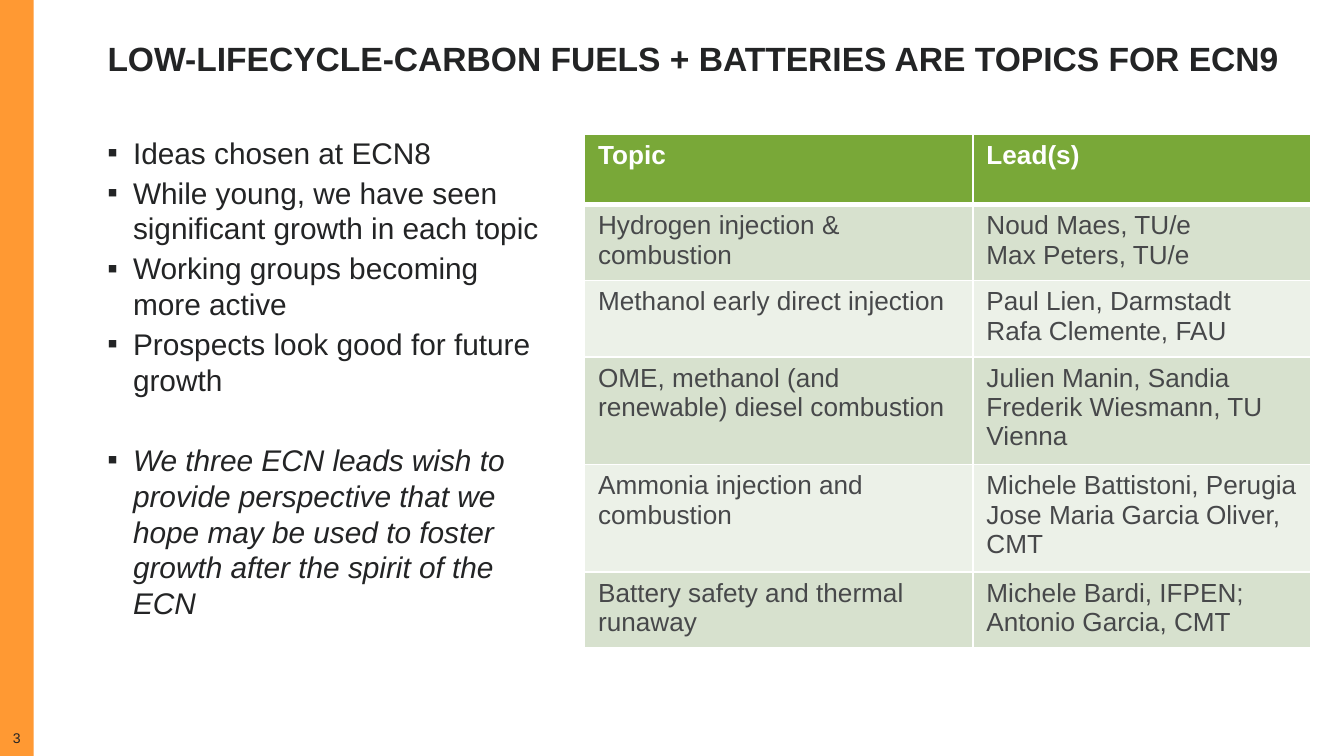
import dataclasses

import lxml.etree
import pptx
import pptx.dml.color
import pptx.enum.shapes
import pptx.enum.text
import pptx.oxml
import pptx.oxml.ns
import pptx.util

ANCHOR = pptx.enum.text.MSO_ANCHOR
ALIGN = pptx.enum.text.PP_ALIGN


@dataclasses.dataclass(frozen=True)
class Theme:
    font: str = "Arial"
    ink: str = "232425"
    table_ink: str = "47484A"
    white: str = "FFFFFF"
    accent: str = "FF9933"
    header: str = "79A838"
    bands: tuple = ("D7E1CE", "ECF1E8")
    title_size: float = 18
    body_size: float = 16
    table_size: float = 14
    number_size: float = 7.5
    thin_line: float = 1
    thick_line: float = 3


THEME = Theme()

# The slide is a grid of 40 columns by 45 rows
WIDTH, HEIGHT = pptx.util.Inches(10), pptx.util.Inches(5.625)
COLUMN, ROW = WIDTH / 40, HEIGHT / 45
TEXT_LEFT, CONTENT_TOP = 3.2, 8

TITLE = "LOW-LIFECYCLE-CARBON FUELS + BATTERIES ARE TOPICS FOR ECN9"
POINTS = [
    "Ideas chosen at ECN8",
    "While young, we have seen significant growth in each topic",
    "Working groups becoming more active",
    "Prospects look good for future growth",
]
CLOSING_POINT = (
    "We three ECN leads wish to provide perspective that we hope "
    "may be used to foster growth after the spirit of the ECN"
)
TOPICS = [
    ("Topic", "Lead(s)"),
    ("Hydrogen injection & combustion", "Noud Maes, TU/e\nMax Peters, TU/e"),
    ("Methanol early direct injection", "Paul Lien, Darmstadt\nRafa Clemente, FAU"),
    ("OME, methanol (and renewable) diesel combustion",
     "Julien Manin, Sandia\nFrederik Wiesmann, TU Vienna"),
    ("Ammonia injection and combustion",
     "Michele Battistoni, Perugia\nJose Maria Garcia Oliver, CMT"),
    ("Battery safety and thermal runaway",
     "Michele Bardi, IFPEN; Antonio Garcia, CMT"),
]
TOPIC_COLUMNS = (11.56, 10.04)
TOPIC_ROWS = (4.16, 4.16, 3.68, 5.12, 4.16, 4.16)


def place(left, top, width, height):
    """Turn grid columns and rows into slide lengths."""
    return (round(left * COLUMN), round(top * ROW),
            round(width * COLUMN), round(height * ROW))


def rgb(value):
    return pptx.dml.color.RGBColor.from_string(value)


def format_runs(text_frame, size, color=THEME.ink, bold=False):
    for paragraph in text_frame.paragraphs:
        for run in paragraph.runs:
            run.font.name = THEME.font
            run.font.size = pptx.util.Pt(size)
            run.font.color.rgb = rgb(color)
            run.font.bold = bold


def add_text(slide, area, text, size, anchor=ANCHOR.TOP, bold=False):
    text_frame = slide.shapes.add_textbox(*place(*area)).text_frame
    text_frame.word_wrap = True
    text_frame.vertical_anchor = anchor
    text_frame.margin_left = text_frame.margin_right = 0
    text_frame.margin_top = text_frame.margin_bottom = 0
    text_frame.text = text
    format_runs(text_frame, size, bold=bold)
    return text_frame


def add_band(slide, area):
    band = slide.shapes.add_shape(
        pptx.enum.shapes.MSO_SHAPE.RECTANGLE, *place(*area))
    band.shadow.inherit = False
    band.fill.solid()
    band.fill.fore_color.rgb = rgb(THEME.accent)
    band.line.fill.background()


def add_bullet(paragraph, indent=pptx.util.Inches(0.19)):
    properties = paragraph._p.get_or_add_pPr()
    properties.set("marL", str(indent))
    properties.set("indent", str(-indent))
    for tag, name, value in (("a:buFont", "typeface", THEME.font),
                             ("a:buChar", "char", "▪")):
        element = lxml.etree.SubElement(properties, pptx.oxml.ns.qn(tag))
        element.set(name, value)


def add_points(slide, area):
    text_frame = add_text(
        slide, area, "\n".join(POINTS + [CLOSING_POINT]), THEME.body_size)
    for paragraph in text_frame.paragraphs:
        add_bullet(paragraph)
    first, *others, closing = text_frame.paragraphs
    first.space_before = pptx.util.Pt(0)
    for paragraph in others:
        paragraph.space_before = pptx.util.Pt(2.2)
    closing.space_before = pptx.util.Pt(23.6)
    closing.runs[0].font.italic = True


def set_borders(cell, bottom, top):
    properties = cell._tc.get_or_add_tcPr()
    widths = {"a:lnL": THEME.thin_line, "a:lnR": THEME.thin_line,
              "a:lnT": top, "a:lnB": bottom}
    for position, (tag, width) in enumerate(widths.items()):
        line = pptx.oxml.parse_xml(
            f'<{tag} {pptx.oxml.ns.nsdecls("a")} w="{pptx.util.Pt(width)}">'
            f'<a:solidFill><a:srgbClr val="{THEME.white}"/></a:solidFill></{tag}>')
        properties.insert(position, line)


def add_topic_table(slide, left, top):
    area = place(left, top, sum(TOPIC_COLUMNS), sum(TOPIC_ROWS))
    table = slide.shapes.add_table(
        len(TOPIC_ROWS), len(TOPIC_COLUMNS), *area).table
    for column, width in zip(table.columns, TOPIC_COLUMNS):
        column.width = round(width * COLUMN)
    for index, (row, height) in enumerate(zip(table.rows, TOPIC_ROWS)):
        row.height = round(height * ROW)
        is_header = index == 0
        fill = THEME.header if is_header else THEME.bands[(index - 1) % 2]
        color = THEME.white if is_header else THEME.table_ink
        bottom = THEME.thick_line if is_header else THEME.thin_line
        above = THEME.thick_line if index == 1 else THEME.thin_line
        for cell, text in zip(row.cells, TOPICS[index]):
            cell.text_frame.text = text
            format_runs(cell.text_frame, THEME.table_size, color, is_header)
            cell.fill.solid()
            cell.fill.fore_color.rgb = rgb(fill)
            set_borders(cell, bottom, above)


def main():
    presentation = pptx.Presentation()
    presentation.slide_width, presentation.slide_height = WIDTH, HEIGHT
    slide = presentation.slides.add_slide(presentation.slide_layouts[6])

    # Side band and slide number
    add_band(slide, (0, 0, 1, 45))
    number = add_text(slide, (-0.5, 43.2, 2, 1.2), "3",
                      THEME.number_size, ANCHOR.BOTTOM)
    number.paragraphs[0].alignment = ALIGN.CENTER

    # Title
    title = add_text(slide, (TEXT_LEFT, 0.24, 35.16, 4.48), TITLE,
                     THEME.title_size, ANCHOR.BOTTOM, bold=True)
    title.paragraphs[0].line_spacing = 0.95

    # Points on the left, topics and leads on the right
    add_points(slide, (TEXT_LEFT, CONTENT_TOP, 13.2, 29))
    add_topic_table(slide, 17.4, CONTENT_TOP)

    presentation.save("out.pptx")


if __name__ == "__main__":
    main()
